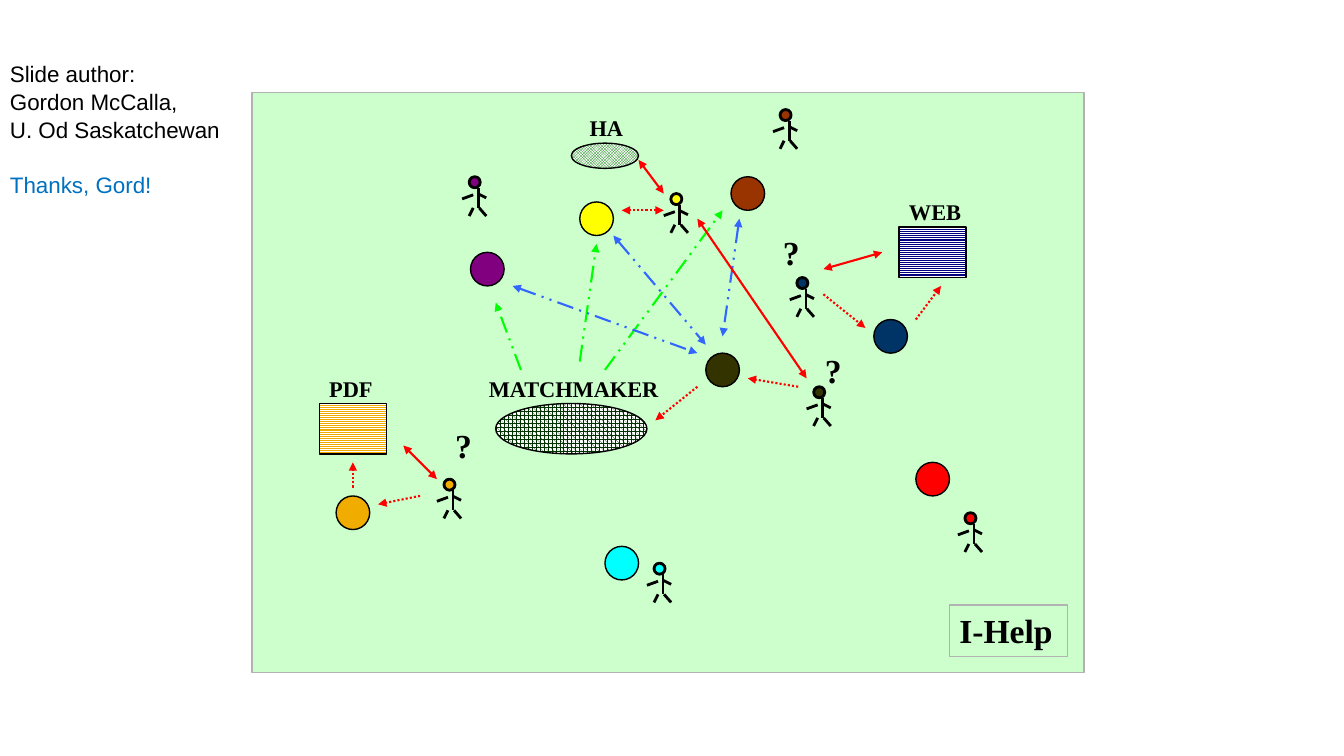
from dataclasses import dataclass

from lxml import etree
from pptx import Presentation
from pptx.dml.color import RGBColor
from pptx.enum.dml import MSO_LINE, MSO_PATTERN
from pptx.enum.shapes import MSO_CONNECTOR, MSO_SHAPE
from pptx.enum.text import MSO_ANCHOR, PP_ALIGN
from pptx.oxml.ns import qn
from pptx.util import Inches, Pt

RECTANGLE, ELLIPSE = MSO_SHAPE.RECTANGLE, MSO_SHAPE.OVAL
STRAIGHT = MSO_CONNECTOR.STRAIGHT
DOTTED, DASH_DOT_DOT = MSO_LINE.ROUND_DOT, MSO_LINE.DASH_DOT_DOT
STRIPES, NET, CHECKS = MSO_PATTERN.LIGHT_HORIZONTAL, MSO_PATTERN.SPHERE, MSO_PATTERN.SMALL_CHECKER_BOARD
LEFT, TOP = PP_ALIGN.LEFT, MSO_ANCHOR.TOP
UNIT = 1 / 12


@dataclass(frozen=True)
class Theme:
    """Colours, fonts and type sizes of the slide."""
    panel: str = "CCFFCC"
    border: str = "B2B2B2"
    ink: str = "000000"
    paper: str = "FFFFFF"
    thanks: str = "0070C0"
    red: str = "FF0000"
    green: str = "00FF00"
    blue: str = "3366FF"
    orange: str = "F0AD00"
    purple: str = "800080"
    yellow: str = "FFFF00"
    brown: str = "993300"
    navy: str = "003366"
    olive: str = "333300"
    cyan: str = "00FFFF"
    web_stripe: str = "000080"
    match_net: str = "003300"
    helper_check: str = "008000"
    serif: str = "Times New Roman"
    sans: str = "Arial"
    small: int = 16
    large: int = 24


THEME = Theme()


@dataclass(frozen=True)
class Box:
    """A rectangle in inches, with a grid of twelfths of an inch inside it."""
    left: float
    top: float
    width: float
    height: float

    def point(self, column, row):
        """Return the position of a grid point in inches."""
        return self.left + column * UNIT, self.top + row * UNIT

    def cell(self, column, row, columns, rows):
        """Return the box that spans the given grid cells."""
        return Box(*self.point(column, row), columns * UNIT, rows * UNIT)

    def lengths(self):
        """Return the four measures as lengths."""
        return [Inches(value) for value in (self.left, self.top, self.width, self.height)]


def colour(code):
    """Turn a hexadecimal code into a colour."""
    return RGBColor.from_string(code)


def add_outline(shapes, kind, box, fill, border=THEME.ink, weight=1.0, pattern=None):
    """Add a preset shape with a plain or patterned fill."""
    shape = shapes.add_shape(kind, *box.lengths())
    shape.shadow.inherit = False
    if pattern is None:
        shape.fill.solid()
    else:
        shape.fill.patterned()
        shape.fill.pattern = pattern
        shape.fill.back_color.rgb = colour(THEME.paper)
    shape.fill.fore_color.rgb = colour(fill)
    shape.line.color.rgb = colour(border)
    shape.line.width = Pt(weight)
    return shape


def add_line(shapes, start, end, ink=THEME.ink, weight=2.0, dash=None, ends=()):
    """Add a straight line with optional dashes and arrowheads."""
    line = shapes.add_connector(STRAIGHT, *(Inches(value) for value in (*start, *end)))
    line.line.color.rgb = colour(ink)
    line.line.width = Pt(weight)
    if dash is not None:
        line.line.dash_style = dash
    properties = line._element.spPr
    for end_name in ends:
        etree.SubElement(properties.find(qn("a:ln")), qn(f"a:{end_name}"), type="triangle")
    etree.SubElement(properties, qn("a:effectLst"))


def write(paragraph, text, **values):
    """Put a run in a paragraph and set its font values."""
    paragraph.alignment = LEFT
    run = paragraph.add_run()
    run.text = text
    run.font.color.rgb = colour(values.pop("ink", THEME.ink))
    for name, value in values.items():
        setattr(run.font, name, value)


def add_label(shapes, box, text, size):
    """Add a bold serif label on one line."""
    frame = shapes.add_textbox(*box.lengths()).text_frame
    frame.word_wrap = False
    write(frame.paragraphs[0], text, size=Pt(size), name=THEME.serif, bold=True)


def add_person(slide, left, top, fill):
    """Draw a stick figure from its top left corner."""
    shapes = slide.shapes.add_group_shape().shapes
    limbs = [
        ((0.16, 0.11), (0.16, 0.31)),
        ((0, 0.22), (0.11, 0.18)),
        ((0.16, 0.17), (0.24, 0.21)),
        ((0.11, 0.31), (0.07, 0.39)),
        ((0.24, 0.39), (0.17, 0.31)),
    ]
    for limb in limbs:
        add_line(shapes, *((left + x, top + y) for x, y in limb))
    add_outline(shapes, ELLIPSE, Box(left + 0.07, top, 0.11, 0.11), fill, weight=2)


def add_resources(slide, panel):
    """Draw the labelled services and documents."""
    resources = [
        ("PDF", RECTANGLE, (8, 37, 8, 6), STRIPES, THEME.orange, 0, 0.63),
        ("WEB", RECTANGLE, (77, 16, 8, 6), STRIPES, THEME.web_stripe, 0, 0.72),
        ("MATCHMAKER", ELLIPSE, (29, 37, 18, 6), NET, THEME.match_net, -2, 1.9),
        ("HA", ELLIPSE, (38, 6, 8, 3), CHECKS, THEME.helper_check, 1, 0.53),
    ]
    for name, kind, cells, pattern, fill, shift, width in resources:
        shapes = slide.shapes.add_group_shape().shapes
        add_outline(shapes, kind, panel.cell(*cells), fill, pattern=pattern)
        label = Box(*panel.point(cells[0] + shift, cells[1] - 4), width, 0.37)
        add_label(shapes, label, name, THEME.small)


def add_people_and_agents(slide, panel):
    """Draw each person with the agent of the same colour."""
    pairs = [
        (THEME.orange, (22, 46), (10, 48)),
        (THEME.purple, (25, 10), (26, 19)),
        (THEME.yellow, (49, 12), (39, 13)),
        (THEME.brown, (62, 2), (57, 10)),
        (THEME.navy, (64, 22), (74, 27)),
        (THEME.red, (84, 50), (79, 44)),
        (THEME.olive, (66, 35), (54, 31)),
        (THEME.cyan, (47, 56), (42, 54)),
    ]
    for fill, person, agent in pairs:
        add_person(slide, *panel.point(*person), fill)
        add_outline(slide.shapes, ELLIPSE, panel.cell(*agent, 4, 4), fill)
    for place in [(23, 39), (62, 16), (67, 30)]:
        add_label(slide.shapes, Box(*panel.point(*place), 0.37, 0.5), "?", THEME.large)


def add_messages(slide, panel):
    """Draw the arrows between people, agents and services."""
    one_way, both_ways = ("tailEnd",), ("headEnd", "tailEnd")
    messages = [
        (THEME.red, DOTTED, one_way, [
            (20, 48, 15, 49), (68, 24, 73, 28), (12, 47, 12, 44),
            (79, 27, 82, 23), (65, 35, 59, 34), (53, 35, 48, 39)]),
        (THEME.green, DASH_DOT_DOT, one_way, [
            (32, 33, 29, 25), (39, 32, 41, 18), (42, 33, 56, 14)]),
        (THEME.blue, DASH_DOT_DOT, both_ways, [
            (31, 23, 53, 31), (43, 17, 54, 30), (58, 15, 56, 29)]),
        (THEME.red, DOTTED, both_ways, [(49, 14, 44, 14)]),
        (THEME.red, None, both_ways, [
            (18, 42, 22, 46), (75, 19, 68, 21), (53, 15, 66, 34), (46, 8, 49, 12)]),
    ]
    for ink, dash, ends, routes in messages:
        for route in routes:
            add_line(slide.shapes, panel.point(*route[:2]), panel.point(*route[2:]),
                     ink, 1.5, dash, ends)


def add_panel(slide, panel):
    """Draw the green panel and its title tag."""
    add_outline(slide.shapes, RECTANGLE, panel, THEME.panel, THEME.border)
    tag_box = Box(*panel.point(83, 61), 1.17, 0.51)
    tag = add_outline(slide.shapes, RECTANGLE, tag_box, THEME.panel, THEME.border)
    tag.text_frame.vertical_anchor = TOP
    write(tag.text_frame.paragraphs[0], "I-Help", size=Pt(THEME.large), name=THEME.serif, bold=True)


def add_credit(slide, box):
    """Write the author credit and the thanks."""
    frame = slide.shapes.add_textbox(*box.lengths()).text_frame
    frame.word_wrap = False
    lines = [
        ("Slide author:", THEME.ink, 0),
        ("Gordon McCalla,", THEME.ink, 0),
        ("U. Od Saskatchewan", THEME.ink, 0),
        ("Thanks, Gord!", THEME.thanks, 19.3),
    ]
    for index, (text, ink, gap) in enumerate(lines):
        paragraph = frame.add_paragraph() if index else frame.paragraphs[0]
        for name, value in {"line_spacing": 1.05, "space_before": Pt(gap)}.items():
            setattr(paragraph, name, value)
        write(paragraph, text, ink=ink, size=Pt(THEME.small), name=THEME.sans)


def main():
    """Build the slide and save it."""
    presentation = Presentation()
    presentation.slide_width, presentation.slide_height = Inches(13.33), Inches(7.5)
    slide = presentation.slides.add_slide(presentation.slide_layouts[6])
    panel = Box(2.5, 0.92, 8.25, 5.75)
    for add_region in (add_panel, add_resources, add_people_and_agents, add_messages):
        add_region(slide, panel)
    add_credit(slide, Box(0, 0.53, 2.31, 1.45))
    presentation.save("out.pptx")


if __name__ == "__main__":
    main()
